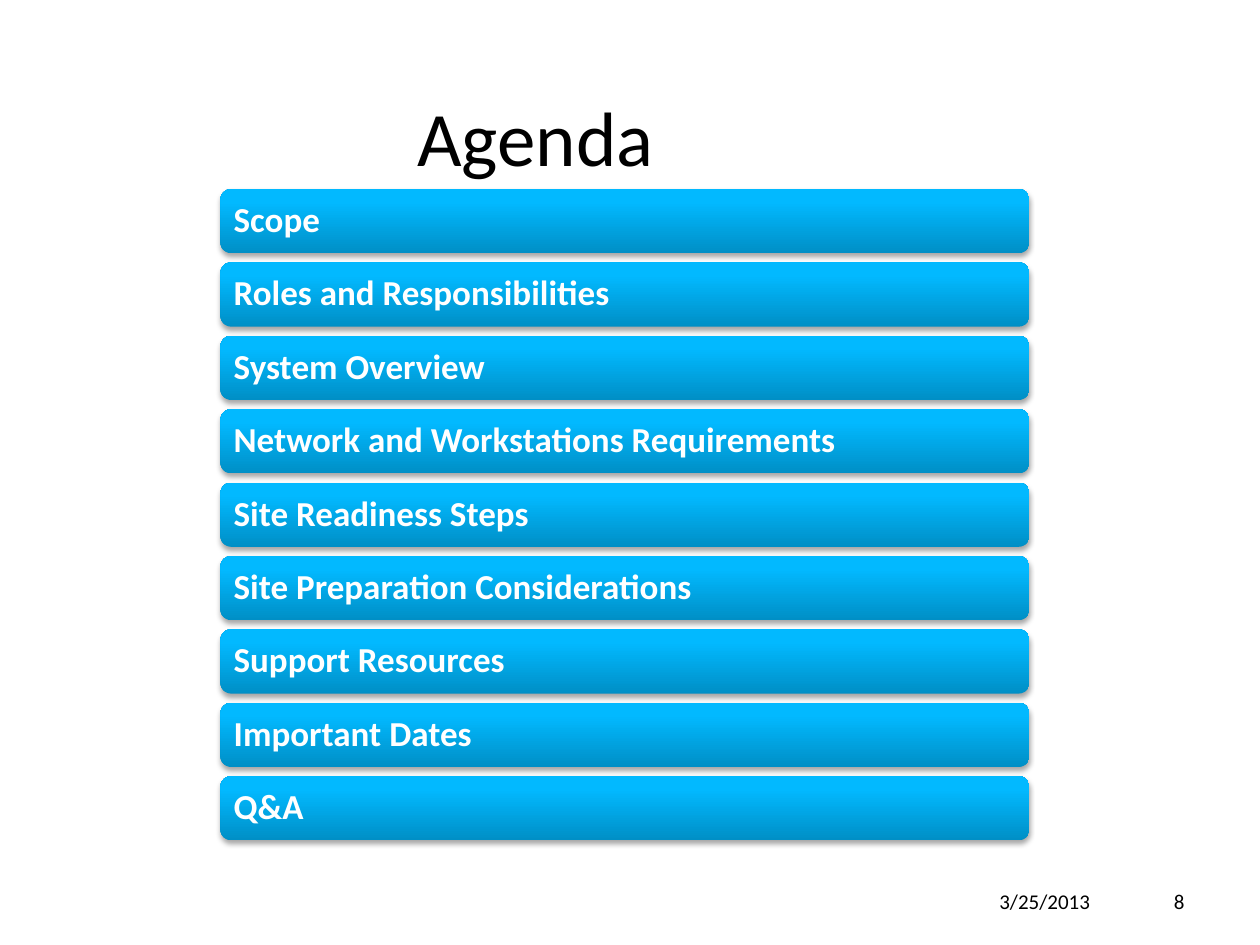
"""Build an agenda slide with a stack of glossy bars."""
from copy import deepcopy
from dataclasses import dataclass

from lxml import etree
from pptx import Presentation
from pptx.dml.color import RGBColor
from pptx.enum.shapes import MSO_SHAPE
from pptx.enum.text import MSO_ANCHOR, PP_ALIGN
from pptx.oxml.ns import qn
from pptx.util import Inches, Pt

LEFT, CENTER, RIGHT = PP_ALIGN.LEFT, PP_ALIGN.CENTER, PP_ALIGN.RIGHT
MIDDLE = MSO_ANCHOR.MIDDLE
ROUNDED = MSO_SHAPE.ROUNDED_RECTANGLE

BLACK = RGBColor(0x00, 0x00, 0x00)
WHITE = RGBColor(0xFF, 0xFF, 0xFF)
DEEP_BLUE = RGBColor(0x00, 0x8F, 0xC6)
BRIGHT_BLUE = RGBColor(0x02, 0xB9, 0xFF)
TOP_BLUE = RGBColor(0x03, 0xBA, 0xFF)
FONT = "Calibri"

BAR_LEFT, BAR_TOP, BAR_WIDTH, BAR_HEIGHT = 1.75, 1.5, 6.42, 0.51
BAR_PITCH = 4.66 / 8
LABEL_INSET = 0.025
TITLE_ONLY = 5


@dataclass(frozen=True)
class Area:
    left: float
    top: float
    width: float
    height: float

    def lengths(self) -> tuple:
        return tuple(map(Inches, (self.left, self.top, self.width, self.height)))

    def inset(self, margin: float) -> "Area":
        return Area(self.left + margin, self.top + margin,
                    self.width - 2 * margin, self.height - 2 * margin)


@dataclass(frozen=True)
class FooterItem:
    text: str
    area: Area


AGENDA = (
    "Scope",
    "Roles and Responsibilities",
    "System Overview",
    "Network and Workstations Requirements",
    "Site Readiness Steps",
    "Site Preparation Considerations",
    "Support Resources",
    "Important Dates",
    "Q&A",
)
FOOTER = (
    FooterItem("3/25/2013", Area(7.58, 6.95, 1.17, 0.4)),
    FooterItem("8", Area(8.83, 6.95, 0.67, 0.4)),
)


def write_text(box, text: str, *, size: float, color: RGBColor = BLACK,
               bold: bool = False, align=LEFT, margin: float | None = None,
               line_spacing: float | None = None,
               space_after: float | None = None) -> None:
    frame = box.text_frame
    frame.word_wrap = True
    frame.vertical_anchor = MIDDLE
    if margin is not None:
        frame.margin_left = frame.margin_right = Inches(margin)
        frame.margin_top = frame.margin_bottom = Inches(margin)
    para = frame.paragraphs[0]
    para.alignment = align
    if line_spacing is not None:
        para.line_spacing = line_spacing
    if space_after is not None:
        para.space_after = Pt(space_after)
    span = para.add_run()
    span.text = text
    span.font.name = FONT
    span.font.size = Pt(size)
    span.font.bold = bold
    span.font.color.rgb = color


def add_gradient(bar) -> None:
    bar.fill.gradient()
    bar.fill.gradient_angle = 90
    stop_list = bar._element.spPr.find(".//" + qn("a:gsLst"))
    stop_list.append(deepcopy(stop_list[-1]))
    colors = (DEEP_BLUE, BRIGHT_BLUE, TOP_BLUE)
    for stop, color, position in zip(bar.fill.gradient_stops, colors, (0, 0.8, 1)):
        stop.color.rgb = color
        stop.position = position


def add_shadow(bar) -> None:
    bar.shadow.inherit = False
    effects = bar._element.spPr.find(qn("a:effectLst"))
    shadow = etree.SubElement(effects, qn("a:outerShdw"), blurRad=str(Pt(3.1)),
                              dist=str(Pt(1.8)), dir="5400000", rotWithShape="0")
    color = etree.SubElement(shadow, qn("a:srgbClr"), val=str(BLACK))
    etree.SubElement(color, qn("a:alpha"), val="35000")


def add_bar(group, text: str, area: Area) -> None:
    bar = group.shapes.add_shape(ROUNDED, *area.lengths())
    bar.line.fill.background()
    add_gradient(bar)
    add_shadow(bar)
    label = group.shapes.add_textbox(*area.inset(LABEL_INSET).lengths())
    write_text(label, text, size=20, color=WHITE, bold=True, margin=0.08,
               line_spacing=0.9, space_after=7)


def main() -> None:
    deck = Presentation()
    deck.slide_width, deck.slide_height = Inches(10), Inches(7.5)
    page = deck.slides.add_slide(deck.slide_layouts[TITLE_ONLY])
    title = page.shapes.title
    title.left, title.top, title.width, title.height = Area(0, 0.58, 8.5, 1).lengths()
    write_text(title, "Agenda", size=44, align=CENTER)
    for item in FOOTER:
        box = page.shapes.add_textbox(*item.area.lengths())
        write_text(box, item.text, size=12, align=RIGHT)
    group = page.shapes.add_group_shape()
    for index, topic in enumerate(AGENDA):
        top = BAR_TOP + index * BAR_PITCH
        add_bar(group, topic, Area(BAR_LEFT, top, BAR_WIDTH, BAR_HEIGHT))
    deck.save("out.pptx")


if __name__ == "__main__":
    main()
